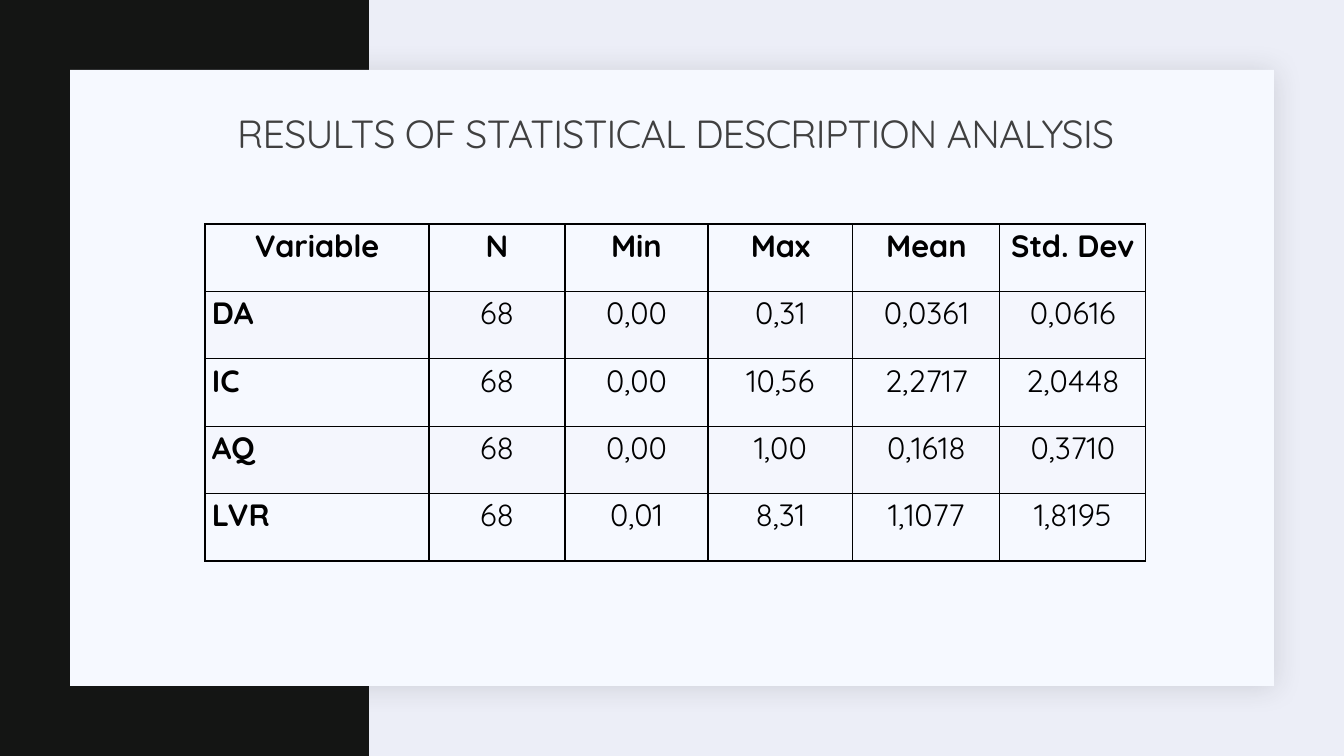
from lxml.etree import SubElement
from pptx import Presentation
from pptx.dml.color import RGBColor
from pptx.enum.shapes import MSO_SHAPE
from pptx.enum.text import MSO_ANCHOR, MSO_AUTO_SIZE, PP_ALIGN
from pptx.oxml import parse_xml
from pptx.oxml.ns import nsdecls, qn
from pptx.util import Pt

PX = 914400 / 100.8
FONT = "Quicksand"
COLORS = {
    "background": "ECEEF7",
    "band": "141514",
    "card": "F6F9FF",
    "shadow": "1F2125",
    "title": "404040",
    "text": "000000",
    "border": "000000",
    "stripe": "ECEEF7",
}
COLUMN_WIDTHS = [224, 136, 143, 145, 147, 146]
ROWS = [
    ["Variable", "N", "Min", "Max", "Mean", "Std. Dev"],
    ["DA", "68", "0,00", "0,31", "0,0361", "0,0616"],
    ["IC", "68", "0,00", "10,56", "2,2717", "2,0448"],
    ["AQ", "68", "0,00", "1,00", "0,1618", "0,3710"],
    ["LVR", "68", "0,01", "8,31", "1,1077", "1,8195"],
]


def px(length):
    return round(length * PX)


def rgb(name):
    return RGBColor.from_string(COLORS[name])


def set_all(obj, values):
    for name, value in values.items():
        setattr(obj, name, value)


def write(tf, text, color, font, paragraph):
    p = tf.paragraphs[0]
    set_all(p, paragraph)
    r = p.add_run()
    r.text = text
    set_all(r.font, {"name": FONT, **font})
    r.font.color.rgb = rgb(color)
    return r


def add_rect(slide, box, color):
    sp = slide.shapes.add_shape(MSO_SHAPE.RECTANGLE, *map(px, box))
    sp.shadow.inherit = False
    sp.fill.solid()
    sp.fill.fore_color.rgb = rgb(color)
    sp.line.fill.background()
    return sp


def add_card(slide, box):
    sp = add_rect(slide, box, "card")
    effects = sp._element.spPr.find(qn("a:effectLst"))
    effects.append(parse_xml(
        f'<a:outerShdw {nsdecls("a")} blurRad="{Pt(20)}" dist="{Pt(2)}" '
        f'dir="2700000" algn="tl" rotWithShape="0">'
        f'<a:srgbClr val="{COLORS["shadow"]}"><a:alpha val="15000"/></a:srgbClr>'
        f'</a:outerShdw>'))


def add_title(slide, box, text):
    """Place the title placeholder in front of the shapes drawn so far."""
    sp = slide.shapes.title
    slide.shapes._spTree.append(sp._element)
    set_all(sp, dict(zip(("left", "top", "width", "height"), map(px, box))))
    tf = sp.text_frame
    set_all(tf, {"word_wrap": True, "auto_size": MSO_AUTO_SIZE.NONE,
                 "vertical_anchor": MSO_ANCHOR.MIDDLE})
    r = write(tf, text, "title", {"size": Pt(28)},
              {"alignment": PP_ALIGN.CENTER, "line_spacing": 0.9})
    r._r.get_or_add_rPr().set("spc", "-50")


def add_borders(cell):
    tc_pr = cell._tc.get_or_add_tcPr()
    for side in ("lnL", "lnR", "lnT", "lnB"):
        tc_pr.append(parse_xml(
            f'<a:{side} {nsdecls("a")} w="{Pt(1)}"><a:solidFill>'
            f'<a:srgbClr val="{COLORS["border"]}"/></a:solidFill></a:{side}>'))


def fill_cell(cell, striped):
    if not striped:
        cell.fill.background()
        return
    cell.fill.solid()
    cell.fill.fore_color.rgb = rgb("stripe")
    color = cell._tc.tcPr.find(qn("a:solidFill"))[0]
    SubElement(color, qn("a:alpha")).set("val", "20000")


def add_statistics_table(slide, box):
    frame = slide.shapes.add_table(len(ROWS), len(COLUMN_WIDTHS), *map(px, box))
    table = frame.table
    set_all(table, {"first_row": False, "horz_banding": False})
    for column, width in zip(table.columns, COLUMN_WIDTHS):
        column.width = px(width)
    for i, values in enumerate(ROWS):
        table.rows[i].height = px(box[3] / len(ROWS))
        for j, value in enumerate(values):
            cell = table.cell(i, j)
            set_all(cell, {"margin_left": px(7), "margin_right": px(7),
                           "margin_top": 0, "margin_bottom": 0,
                           "vertical_anchor": MSO_ANCHOR.TOP})
            add_borders(cell)
            fill_cell(cell, striped=i % 2 == 1)
            row_label = i > 0 and j == 0
            write(cell.text_frame, value, "text",
                  {"size": Pt(22), "bold": i == 0 or j == 0},
                  {"alignment": PP_ALIGN.JUSTIFY if row_label else PP_ALIGN.CENTER,
                   "line_spacing": 1.07})


def add_results_slide(prs):
    slide = prs.slides.add_slide(prs.slide_layouts[5])
    slide.background.fill.solid()
    slide.background.fill.fore_color.rgb = rgb("background")
    add_rect(slide, (0, 0, 369, 756), "band")
    add_card(slide, (70, 70, 1204, 616))
    add_title(slide, (121, 104, 1109, 64),
              "RESULTS OF STATISTICAL DESCRIPTION ANALYSIS")
    add_statistics_table(slide, (205, 224, sum(COLUMN_WIDTHS), 337))


def main():
    prs = Presentation()
    set_all(prs, {"slide_width": px(1344), "slide_height": px(756)})
    add_results_slide(prs)
    prs.save("out.pptx")


if __name__ == "__main__":
    main()
